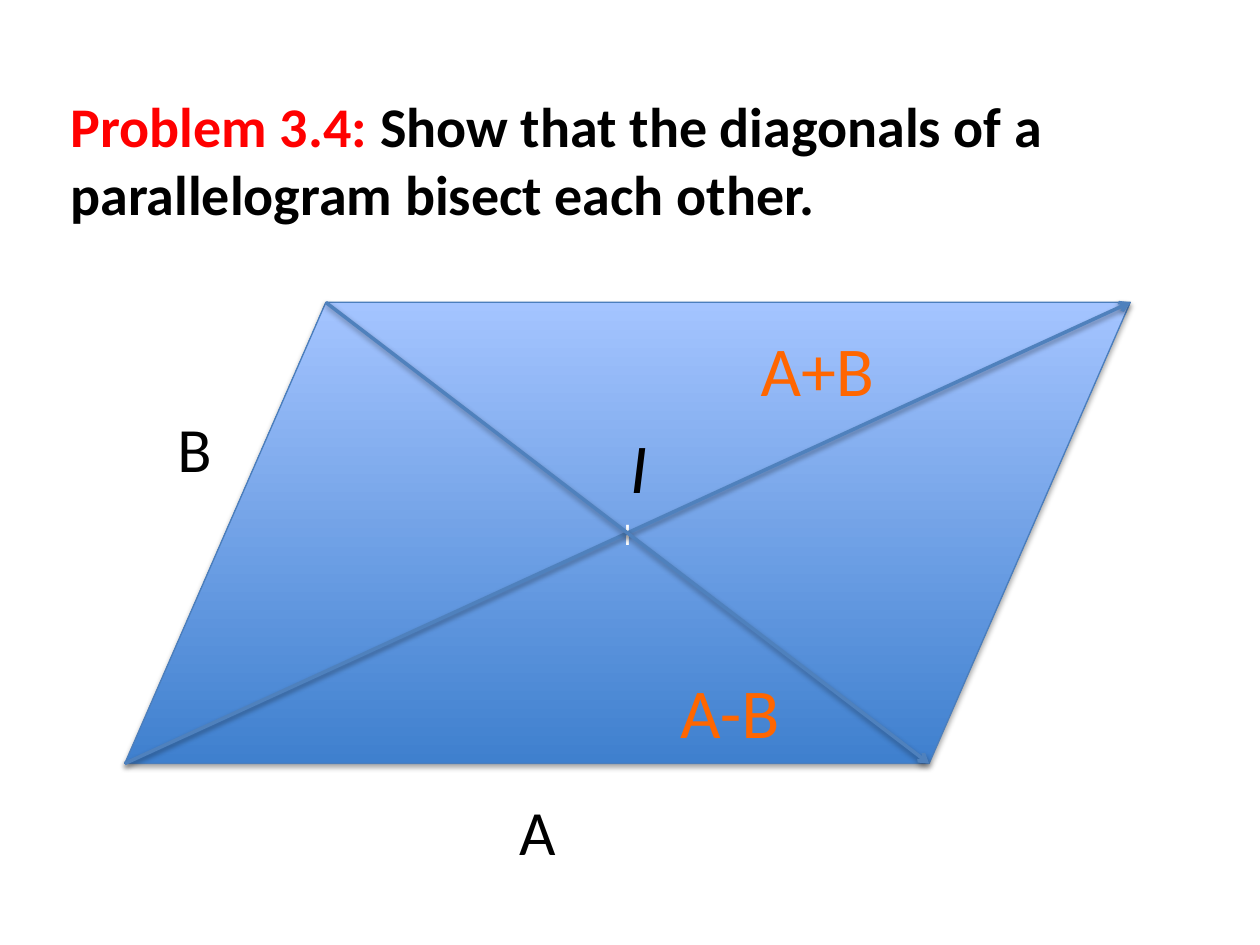
from lxml import etree
from pptx import Presentation
from pptx.dml.color import RGBColor
from pptx.enum.shapes import MSO_CONNECTOR, MSO_SHAPE
from pptx.enum.text import MSO_ANCHOR, MSO_AUTO_SIZE, PP_ALIGN
from pptx.oxml.ns import qn
from pptx.util import Inches, Pt

STRAIGHT = MSO_CONNECTOR.STRAIGHT
PARALLELOGRAM = MSO_SHAPE.FLOWCHART_DATA
TOP, MIDDLE = MSO_ANCHOR.TOP, MSO_ANCHOR.MIDDLE
LEFT, CENTER = PP_ALIGN.LEFT, PP_ALIGN.CENTER
NO_AUTOSIZE = MSO_AUTO_SIZE.NONE

BLACK = RGBColor(0x00, 0x00, 0x00)
WHITE = RGBColor(0xFF, 0xFF, 0xFF)
RED = RGBColor(0xFF, 0x00, 0x00)
ORANGE = RGBColor(0xFF, 0x66, 0x00)
DEEP_BLUE = RGBColor(0x3F, 0x80, 0xCE)
PALE_BLUE = RGBColor(0xA4, 0xC4, 0xFF)
EDGE_BLUE = RGBColor(0x4B, 0x7E, 0xBC)
DIAGONAL_BLUE = RGBColor(0x4F, 0x81, 0xBD)

FONT = "Calibri"
LABEL_WIDTH = 0.16  # share of the figure width
SLANT = 0.2  # share of the figure width the top edge is shifted by

# text, left and top as shares of the figure, format
LABELS = [
    ("B", 0.04, 0.22, {"size": Pt(36)}),
    ("A", 0.38, 1.05, {"size": Pt(36)}),
    ("I", 0.49, 0.25, {"size": Pt(40), "italic": True}),
    ("A+B", 0.62, 0.04, {"size": Pt(40), "color": ORANGE}),
    ("A-B", 0.54, 0.78, {"size": Pt(40), "color": ORANGE}),
]


def add_run(paragraph, text, color=BLACK, **formats):
    run = paragraph.add_run()
    run.text = text
    run.font.color.rgb = color
    for name, value in {"name": FONT, **formats}.items():
        setattr(run.font, name, value)


def add_shadow(shape, distance, opacity):
    """Drop a soft black shadow straight down; call after the line is set."""
    effects = etree.SubElement(shape._element.spPr, qn("a:effectLst"))
    shadow = etree.SubElement(
        effects, qn("a:outerShdw"), blurRad=str(Pt(3.1)), dist=str(Pt(distance)),
        dir="5400000", rotWithShape="0")
    color = etree.SubElement(shadow, qn("a:srgbClr"), val=str(BLACK))
    etree.SubElement(color, qn("a:alpha"), val=str(opacity * 1000))


def add_title(slide, left, top, width, height):
    title = slide.shapes.title
    for name, value in {"left": left, "top": top, "width": width, "height": height}.items():
        setattr(title, name, value)
    frame = title.text_frame
    for name, value in {"word_wrap": True, "auto_size": NO_AUTOSIZE,
                        "vertical_anchor": TOP}.items():
        setattr(frame, name, value)
    paragraph = frame.paragraphs[0]
    paragraph.alignment = LEFT
    add_run(paragraph, "Problem 3.4: ", RED, size=Pt(32), bold=True)
    add_run(paragraph, "Show that the diagonals of a parallelogram bisect each other.",
            size=Pt(32), bold=True)


def add_parallelogram(slide, left, top, width, height):
    shape = slide.shapes.add_shape(PARALLELOGRAM, left, top, width, height)
    shape.fill.gradient()
    shape.fill.gradient_angle = 90
    for stop, color, position in zip(shape.fill.gradient_stops,
                                     (DEEP_BLUE, PALE_BLUE), (0, 1)):
        stop.color.rgb = color
        stop.position = position
    shape.line.color.rgb = EDGE_BLUE
    shape.line.width = Pt(0.75)
    add_shadow(shape, 1.8, 35)
    shape.text_frame.vertical_anchor = MIDDLE
    paragraph = shape.text_frame.paragraphs[0]
    paragraph.alignment = CENTER
    add_run(paragraph, "I", WHITE, size=Pt(18))


def add_diagonal(slide, start, end):
    diagonal = slide.shapes.add_connector(STRAIGHT, *start, *end)
    diagonal.line.color.rgb = DIAGONAL_BLUE
    diagonal.line.width = Pt(2)
    etree.SubElement(diagonal.line._get_or_add_ln(), qn("a:tailEnd"), type="arrow")
    add_shadow(diagonal, 1.6, 38)


def add_label(slide, text, left, top, width, formats):
    height = int(formats["size"] * 1.4)
    box = slide.shapes.add_textbox(left, top, width, height)
    box.text_frame.word_wrap = True
    add_run(box.text_frame.paragraphs[0], text, **formats)


def add_figure(slide, left, top, width, height):
    """Parallelogram with its two diagonals and the vector labels."""
    right, bottom = left + width, top + height
    shift = int(width * SLANT)
    add_parallelogram(slide, left, top, width, height)
    add_diagonal(slide, (left, bottom), (right, top))
    add_diagonal(slide, (left + shift, top), (right - shift, bottom))
    for text, across, down, formats in LABELS:
        add_label(slide, text, left + int(width * across), top + int(height * down),
                  int(width * LABEL_WIDTH), formats)


def main():
    presentation = Presentation()
    presentation.slide_width = Inches(10)
    presentation.slide_height = Inches(7.5)
    slide = presentation.slides.add_slide(presentation.slide_layouts[5])
    add_title(slide, Inches(0.46), Inches(0.68), Inches(8.02), Inches(1.18))
    add_figure(slide, Inches(0.99), Inches(2.4), Inches(7.98), Inches(3.66))
    presentation.save("out.pptx")


if __name__ == "__main__":
    main()
